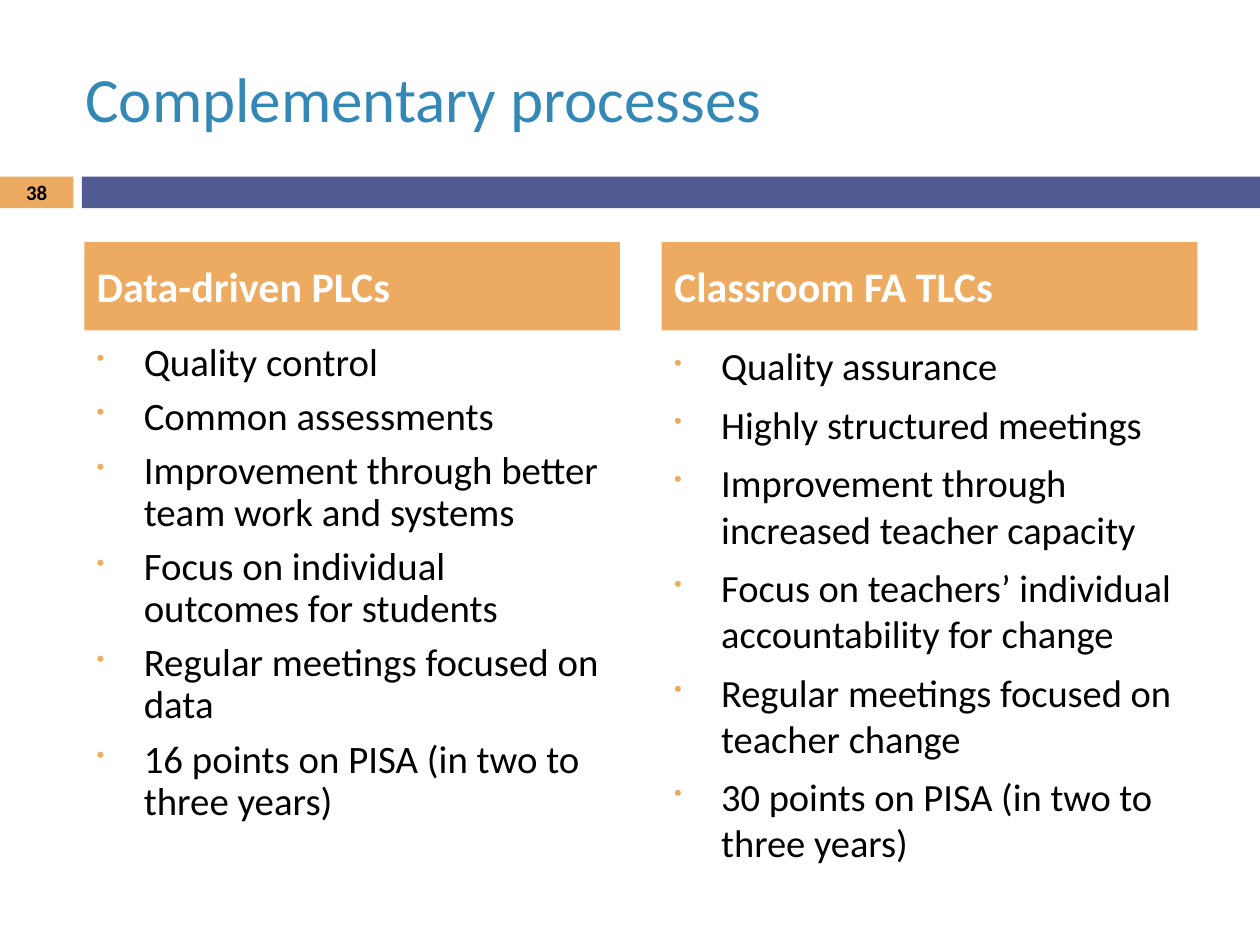
from lxml import etree
from pptx import Presentation
from pptx import util as u
from pptx.dml.color import RGBColor
from pptx.enum import shapes, text
from pptx.oxml.ns import qn

ORANGE, INDIGO, BLUE, BLACK, WHITE = "EDAA61", "525A93", "3488B6", "000000", "FFFFFF"
COLUMN_LEFTS = (1.7, 13.34)
COLUMN_WIDTH = 10.8
BAND_TOP, BAND_HEIGHT = 3.56, 0.64
BULLET_INDENT = 0.95

COLUMNS = [
    ("Data-driven PLCs", {"size": 22.2, "line_spacing": 0.9}, [
        "Quality control",
        "Common assessments",
        "Improvement through better team work and systems",
        "Focus on individual outcomes for students",
        "Regular meetings focused on data",
        "16 points on PISA (in two to three years)",
    ]),
    ("Classroom FA TLCs", {"size": 22}, [
        "Quality assurance",
        "Highly structured meetings",
        "Improvement through increased teacher capacity",
        "Focus on teachers’ individual accountability for change",
        "Regular meetings focused on teacher change",
        "30 points on PISA (in two to three years)",
    ]),
]


def rgb(value):
    return RGBColor.from_string(value)


def apply(target, values):
    for key, value in values.items():
        setattr(target, key, value)


def place(box):
    return [u.Cm(length) for length in box]


def add_bar(slide, box, color):
    bar = slide.shapes.add_shape(shapes.MSO_SHAPE.RECTANGLE, *place(box))
    bar.shadow.inherit = False
    bar.fill.solid()
    bar.fill.fore_color.rgb = rgb(color)
    bar.line.fill.background()
    return bar


def add_text_box(slide, box):
    return slide.shapes.add_textbox(*place(box))


def write(holder, lines, size, color, bold=False, anchor="MIDDLE", **paragraph_format):
    frame = holder.text_frame
    apply(frame, {"word_wrap": True, "vertical_anchor": text.MSO_ANCHOR[anchor]})
    frame.text = "\n".join(lines)
    paragraph_format = {"alignment": text.PP_ALIGN.LEFT} | paragraph_format
    for paragraph in frame.paragraphs:
        apply(paragraph, paragraph_format)
        font = paragraph.runs[0].font
        apply(font, {"name": "Calibri", "size": u.Pt(size), "bold": bold})
        font.color.rgb = rgb(color)
    return frame.paragraphs


def add_bullet(paragraph):
    properties = paragraph._p.get_or_add_pPr()
    indent = u.Cm(BULLET_INDENT)
    properties.set("marL", str(indent))
    properties.set("indent", str(-indent))
    bullet_color = etree.SubElement(properties, qn("a:buClr"))
    etree.SubElement(bullet_color, qn("a:srgbClr"), val=ORANGE)
    etree.SubElement(properties, qn("a:buSzPct"), val="60000")
    etree.SubElement(properties, qn("a:buChar"), char="•")


def add_column(slide, left, heading, body_format, points):
    spacing = {"space_before": u.Pt(7)}
    header = add_bar(slide, (left, 4.88, COLUMN_WIDTH, 1.78), ORANGE)
    write(header, [heading], 24, WHITE, bold=True, **spacing)
    body = add_text_box(slide, (left, 6.78, COLUMN_WIDTH, 9.96))
    for paragraph in write(body, points, color=BLACK, anchor="TOP", **spacing, **body_format):
        add_bullet(paragraph)


def main():
    deck = Presentation()
    apply(deck, {"slide_width": u.Cm(25.4), "slide_height": u.Cm(19.05)})
    slide = deck.slides.add_slide(deck.slide_layouts[6])

    add_bar(slide, (0, BAND_TOP, 1.48, BAND_HEIGHT), ORANGE)
    add_bar(slide, (1.65, BAND_TOP, 23.75, BAND_HEIGHT), INDIGO)
    title = add_text_box(slide, (1.47, 0.76, 22.66, 2.41))
    write(title, ["Complementary processes"], 36, BLUE)
    page_number = add_text_box(slide, (0, 3.53, 1.48, 0.69))
    write(page_number, ["38"], 11.9, BLACK, bold=True, alignment=text.PP_ALIGN.CENTER)

    for left, column in zip(COLUMN_LEFTS, COLUMNS):
        add_column(slide, left, *column)

    deck.save("out.pptx")


if __name__ == "__main__":
    main()
